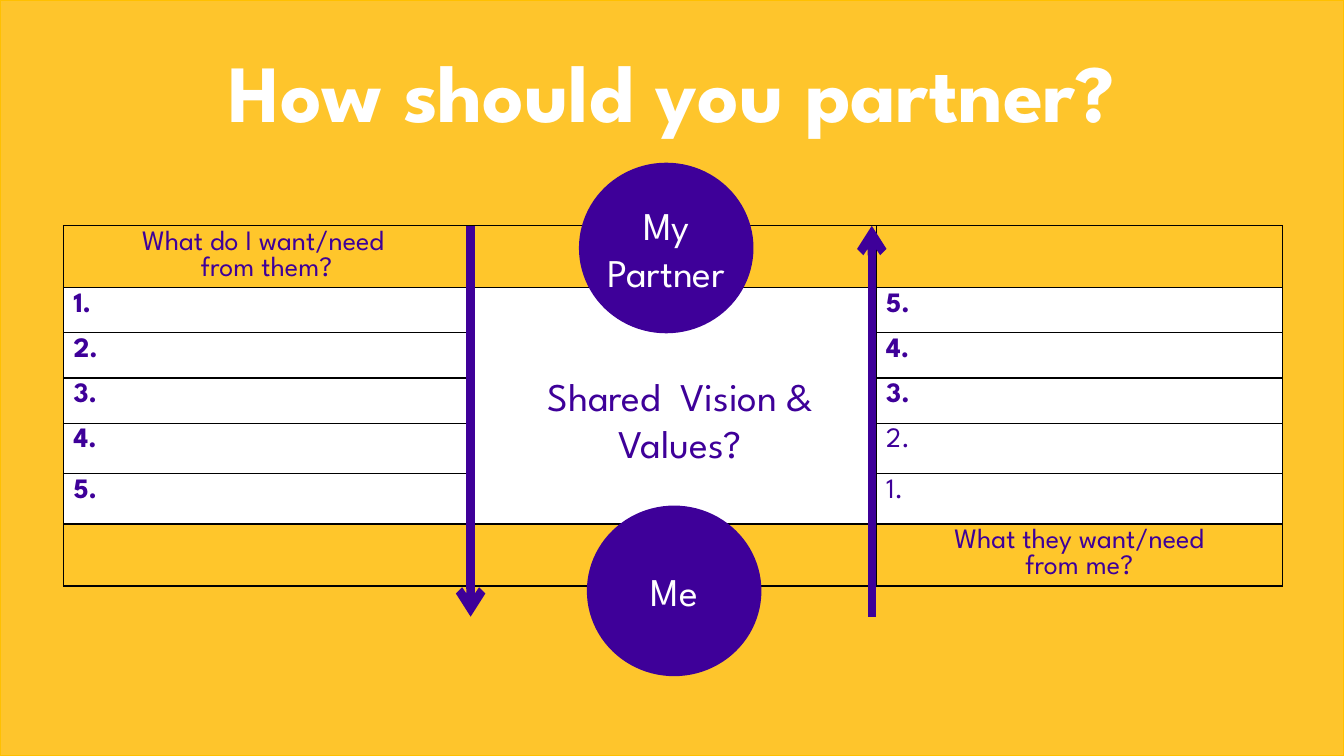
from lxml import etree
from pptx import Presentation
from pptx.dml.color import RGBColor
from pptx.enum.shapes import MSO_CONNECTOR, MSO_SHAPE
from pptx.enum.text import MSO_ANCHOR, PP_ALIGN
from pptx.oxml import parse_xml
from pptx.oxml.ns import nsdecls, qn
from pptx.util import Cm, Pt

CENTER, LEFT = PP_ALIGN.CENTER, PP_ALIGN.LEFT
MIDDLE, TOP = MSO_ANCHOR.MIDDLE, MSO_ANCHOR.TOP
RECTANGLE, OVAL = MSO_SHAPE.RECTANGLE, MSO_SHAPE.OVAL
STRAIGHT = MSO_CONNECTOR.STRAIGHT

PURPLE = RGBColor(0x3E, 0x00, 0x99)
WHITE = RGBColor(0xFF, 0xFF, 0xFF)
YELLOW = RGBColor(0xFE, 0xC5, 0x2C)
EDGE_YELLOW = RGBColor(0xFF, 0xC0, 0x00)
BAND_YELLOW = RGBColor(0xFF, 0xC6, 0x2B)
FONT = "League Spartan"

# Content
TITLE = "How should you partner?"
VISION = "Shared  Vision & Values?"
MY_NEEDS = ["What do I want/need ", "from them?"]
THEIR_NEEDS = ["What they want/need", "from me?"]
NEED_COUNT = 5
LIGHT_THEIR_NUMBERS = (1, 2)

# Layout in centimetres
WIDTH, HEIGHT = 33.87, 19.05
TABLE_LEFT, TABLE_TOP, COLUMN_WIDTH = 1.6, 5.69, 10.24
ROW_HEIGHTS = [1.42, 1.14, 1.14, 1.14, 1.27, 1.27, 1.27]
CIRCLE_WIDTH, CIRCLE_HEIGHT = 4.32, 4.22
CIRCLES = {  # name: (lines, left, top)
    "partner": (["My", "Partner"], 14.63, 4.14),
    "me": (["Me"], 14.83, 12.78),
}
ARROW_BOTTOM = 15.54
ARROWS = [  # x, start y, end y
    (11.86, TABLE_TOP, ARROW_BOTTOM),
    (21.97, ARROW_BOTTOM, TABLE_TOP),
]


def write(text_frame, lines, size, color, bold=False, align=CENTER):
    for index, line in enumerate(lines):
        paragraph = text_frame.add_paragraph() if index else text_frame.paragraphs[0]
        paragraph.text = line
        paragraph.alignment = align
        font = paragraph.font
        font.name, font.size, font.bold = FONT, Pt(size), bold
        font.color.rgb = color


def add_shape(slide, kind, box, fill, line, line_width):
    shape = slide.shapes.add_shape(kind, *map(Cm, box))
    shape.shadow.inherit = False
    shape.fill.solid()
    shape.fill.fore_color.rgb = fill
    shape.line.color.rgb = line
    shape.line.width = Pt(line_width)
    return shape


def add_text(slide, box, text, size, color, bold=False):
    text_frame = slide.shapes.add_textbox(*map(Cm, box)).text_frame
    text_frame.word_wrap = True
    write(text_frame, [text], size, color, bold)


def add_circle(slide, name):
    lines, left, top = CIRCLES[name]
    box = (left, top, CIRCLE_WIDTH, CIRCLE_HEIGHT)
    circle = add_shape(slide, OVAL, box, PURPLE, PURPLE, 2.25)
    circle.text_frame.word_wrap = False
    circle.text_frame.vertical_anchor = MIDDLE
    write(circle.text_frame, lines, 28, WHITE)


def style_cell(cell, fill):
    cell.fill.solid()
    cell.fill.fore_color.rgb = fill
    cell.vertical_anchor = TOP
    properties = cell._tc.get_or_add_tcPr()
    for index, side in enumerate(("lnL", "lnR", "lnT", "lnB")):
        properties.insert(index, parse_xml(
            f'<a:{side} {nsdecls("a")} w="12700"><a:solidFill>'
            f'<a:srgbClr val="000000"/></a:solidFill></a:{side}>'))


def add_needs_table(slide):
    box = (TABLE_LEFT, TABLE_TOP, 3 * COLUMN_WIDTH, sum(ROW_HEIGHTS))
    table = slide.shapes.add_table(len(ROW_HEIGHTS), 3, *map(Cm, box)).table
    table.first_row = table.horz_banding = False
    for column in table.columns:
        column.width = Cm(COLUMN_WIDTH)
    last = len(ROW_HEIGHTS) - 1
    for index, height in enumerate(ROW_HEIGHTS):
        table.rows[index].height = Cm(height)
        fill = BAND_YELLOW if index in (0, last) else WHITE
        for column in range(3):
            style_cell(table.cell(index, column), fill)
    table.cell(1, 1).merge(table.cell(NEED_COUNT, 1))

    write(table.cell(0, 0).text_frame, MY_NEEDS, 20, PURPLE)
    write(table.cell(last, 2).text_frame, THEIR_NEEDS, 20, PURPLE)
    for mine in range(1, NEED_COUNT + 1):
        theirs = NEED_COUNT + 1 - mine
        write(table.cell(mine, 0).text_frame, [f"{mine}."], 20, PURPLE, True, LEFT)
        write(table.cell(mine, 2).text_frame, [f"{theirs}."], 20, PURPLE,
              theirs not in LIGHT_THEIR_NUMBERS, LEFT)


def add_arrow(slide, x, start, end):
    arrow = slide.shapes.add_connector(STRAIGHT, Cm(x), Cm(start), Cm(x), Cm(end))
    arrow.line.color.rgb = PURPLE
    arrow.line.width = Pt(6)
    etree.SubElement(arrow.line._get_or_add_ln(), qn("a:tailEnd"), type="arrow")
    etree.SubElement(arrow._element.spPr, qn("a:effectLst"))


def main():
    presentation = Presentation()
    presentation.slide_width, presentation.slide_height = Cm(WIDTH), Cm(HEIGHT)
    slide = presentation.slides.add_slide(presentation.slide_layouts[6])

    # Background and table
    add_shape(slide, RECTANGLE, (0, 0, WIDTH, HEIGHT), YELLOW, EDGE_YELLOW, 1)
    add_needs_table(slide)

    # Title, circles and arrows
    add_circle(slide, "partner")
    add_text(slide, (0, 0.91, WIDTH, 2.74), TITLE, 58, WHITE, True)
    for arrow in ARROWS:
        add_arrow(slide, *arrow)
    add_circle(slide, "me")

    # Shared centre
    add_text(slide, (13.03, 9.25, 8.23, 2.64), VISION, 28, PURPLE)
    presentation.save("out.pptx")


if __name__ == "__main__":
    main()
